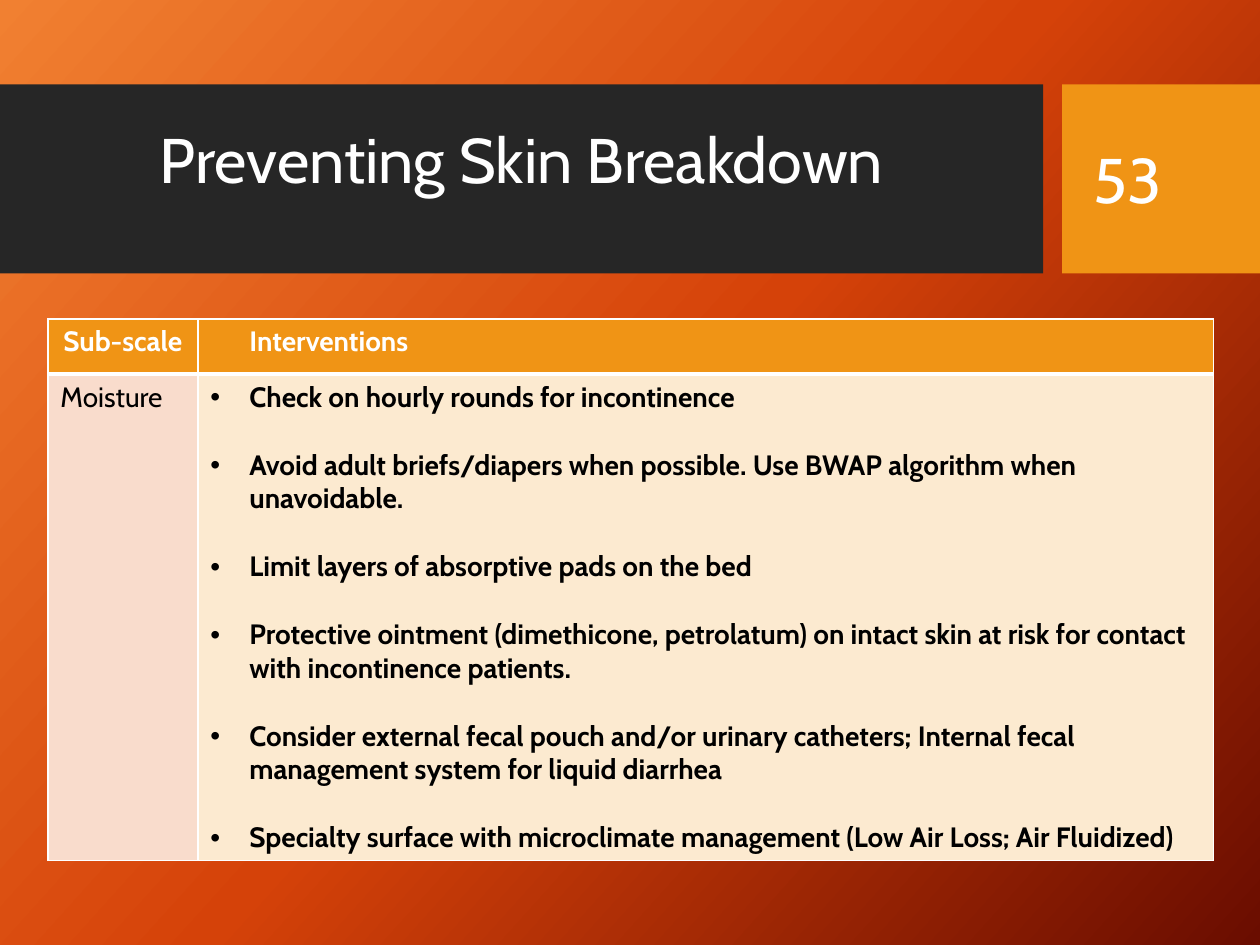
from copy import deepcopy

from lxml import etree
from pptx import Presentation
from pptx import util as u
from pptx.dml.color import RGBColor
from pptx.enum import shapes, text
from pptx.oxml.ns import qn

# Content
TITLE = "Preventing Skin Breakdown"
NUMBER = "53"
HEADINGS = ("Sub-scale", "Interventions")
SUBSCALE = "Moisture"
INTERVENTIONS = [
    "Check on hourly rounds for incontinence",
    "Avoid adult briefs/diapers when possible. Use BWAP algorithm when unavoidable.",
    "Limit layers of absorptive pads on the bed",
    "Protective ointment (dimethicone, petrolatum) on intact skin at risk for contact "
    "with incontinence patients.",
    "Consider external fecal pouch and/or urinary catheters; Internal fecal management "
    "system for liquid diarrhea",
    "Specialty surface with microclimate management (Low Air Loss; Air Fluidized)",
]

# Look
FONT, WHITE, BLACK, DARK, ORANGE = "Cabin", "FFFFFF", "000000", "262626", "F09415"
PINK, CREAM = "F9DCCC", "FCEAD0"
BACKGROUND = [(0, "F18031"), (0.5, "D54209"), (1, "6A0D00")]

# Layout in inches
WIDTH, HEIGHT = 10, 7.5
BAND_TOP, BAND_HEIGHT = 0.67, 1.5
BAND_END, BADGE_LEFT = 8.28, 8.43
TABLE_LEFT, TABLE_TOP = 0.38, 2.53
COLUMNS, ROWS = (1.19, 8.06), (0.44, 3.86)
INDENT = 0.31


def color(value):
    return RGBColor.from_string(value)


def inches(*values):
    return [u.Inches(value) for value in values]


def add_run(paragraph, words, size, ink, bold=False):
    run = paragraph.add_run()
    run.text = words
    font = run.font
    font.name, font.size, font.bold = FONT, u.Pt(size), bold
    font.color.rgb = color(ink)


def add_block(slide, left, width, fill):
    block = slide.shapes.add_shape(
        shapes.MSO_SHAPE.RECTANGLE, *inches(left, BAND_TOP, width, BAND_HEIGHT))
    block.shadow.inherit = False
    block.fill.solid()
    block.fill.fore_color.rgb = color(fill)
    block.line.fill.background()


def add_label(slide, box, words, spacing=None):
    frame = slide.shapes.add_textbox(*inches(*box)).text_frame
    frame.word_wrap = True
    frame.vertical_anchor = text.MSO_ANCHOR.MIDDLE
    frame.paragraphs[0].line_spacing = spacing
    add_run(frame.paragraphs[0], words, 36, WHITE)


def style_cell(cell, fill, top, bottom):
    cell.fill.solid()
    cell.fill.fore_color.rgb = color(fill)
    borders = (("L", 1), ("R", 1), ("T", top), ("B", bottom))
    for place, (side, points) in enumerate(borders):
        line = etree.Element(qn(f"a:ln{side}"), w=str(u.Pt(points)))
        solid = etree.SubElement(line, qn("a:solidFill"))
        etree.SubElement(solid, qn("a:srgbClr"), val=WHITE)
        cell._tc.get_or_add_tcPr().insert(place, line)


def indent(paragraph, bullet=False):
    properties = paragraph._p.get_or_add_pPr()
    properties.set("marL", str(u.Inches(INDENT)))
    properties.set("indent", str(-u.Inches(INDENT) if bullet else 0))
    if bullet:
        etree.SubElement(properties, qn("a:buFont"), typeface="Arial")
        etree.SubElement(properties, qn("a:buChar"), char="•")


deck = Presentation()
deck.slide_width, deck.slide_height = inches(WIDTH, HEIGHT)
slide = deck.slides.add_slide(deck.slide_layouts[6])

# Background gradient, from top left to bottom right
backdrop = slide.background.fill
backdrop.gradient()
backdrop.gradient_angle = 360 - 42
stop_list = slide._element.xpath(".//a:gsLst")[0]
stop_list.append(deepcopy(stop_list[-1]))
for stop, (position, shade) in zip(backdrop.gradient_stops, BACKGROUND):
    stop.position = position
    stop.color.rgb = color(shade)

# Title band and number badge
add_block(slide, 0, BAND_END, DARK)
add_block(slide, BADGE_LEFT, WIDTH - BADGE_LEFT, ORANGE)
add_label(slide, (1.17, BAND_TOP, 7.68, 1.25), TITLE, 0.9)
add_label(slide, (BADGE_LEFT + 0.15, BAND_TOP + 0.15, 1.27, 1.19), NUMBER)

# Table grid
table = slide.shapes.add_table(
    len(ROWS), len(COLUMNS),
    *inches(TABLE_LEFT, TABLE_TOP, sum(COLUMNS), sum(ROWS))).table
for column, width in zip(table.columns, COLUMNS):
    column.width = u.Inches(width)
for row, height in zip(table.rows, ROWS):
    row.height = u.Inches(height)

# Header row
for column, heading in enumerate(HEADINGS):
    cell = table.cell(0, column)
    style_cell(cell, ORANGE, top=1, bottom=3)
    add_run(cell.text_frame.paragraphs[0], heading, 16, WHITE, bold=True)
table.cell(0, 0).text_frame.paragraphs[0].alignment = text.PP_ALIGN.CENTER
indent(table.cell(0, 1).text_frame.paragraphs[0])

# Body row
subscale, actions = table.cell(1, 0), table.cell(1, 1)
style_cell(subscale, PINK, top=3, bottom=1)
style_cell(actions, CREAM, top=3, bottom=1)
add_run(subscale.text_frame.paragraphs[0], SUBSCALE, 16, BLACK)
for number, intervention in enumerate(INTERVENTIONS):
    frame = actions.text_frame
    paragraph = frame.add_paragraph() if number else frame.paragraphs[0]
    indent(paragraph, bullet=True)
    if number:
        paragraph.space_before = u.Pt(19.4)
    add_run(paragraph, intervention, 16, BLACK, bold=True)

deck.save("out.pptx")
